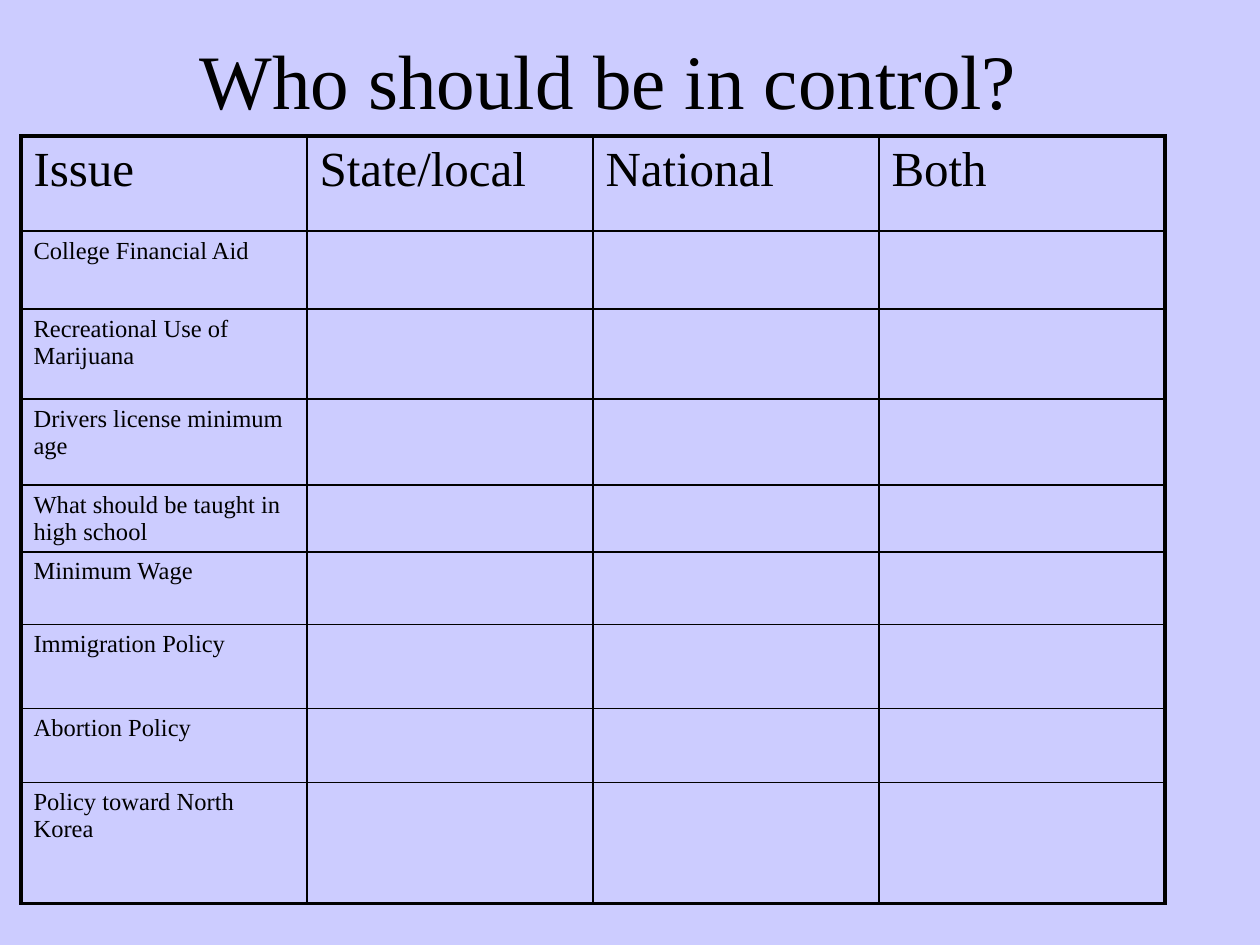
from dataclasses import dataclass

import pptx
import pptx.dml.color
import pptx.enum.text
import pptx.oxml
import pptx.oxml.ns
import pptx.util

PX = 914400 // 126


@dataclass(frozen=True)
class Theme:
    background: str = "CCCCFF"
    ink: str = "000000"
    font: str = "Times New Roman"
    title_size: int = 44
    header_size: int = 28
    issue_size: int = 14
    outer_line: float = 2.25
    inner_line: float = 1


THEME = Theme()
HEADERS = ["Issue", "State/local", "National", "Both"]
ISSUES = [
    "College Financial Aid",
    "Recreational Use of Marijuana",
    "Drivers license minimum age",
    "What should be taught in high school",
    "Minimum Wage",
    "Immigration Policy",
    "Abortion Policy",
    "Policy toward North Korea",
]
ROW_HEIGHTS = [95, 78, 90, 86, 63, 73, 84, 74, 121]


def rgb(value):
    return pptx.dml.color.RGBColor.from_string(value)


def format_runs(paragraph, size):
    for run in paragraph.runs:
        run.font.name = THEME.font
        run.font.size = pptx.util.Pt(size)
        run.font.bold = False
        run.font.color.rgb = rgb(THEME.ink)


def add_border(cell, side, points):
    width = int(pptx.util.Pt(points))
    cell._tc.get_or_add_tcPr().append(pptx.oxml.parse_xml(
        f'<a:ln{side} {pptx.oxml.ns.nsdecls("a")} w="{width}"><a:solidFill>'
        f'<a:srgbClr val="{THEME.ink}"/></a:solidFill></a:ln{side}>'))


def add_space_before(paragraph, percent):
    paragraph._p.get_or_add_pPr().append(pptx.oxml.parse_xml(
        f'<a:spcBef {pptx.oxml.ns.nsdecls("a")}>'
        f'<a:spcPct val="{percent * 1000}"/></a:spcBef>'))


def place_title(slide, left, top, width, height):
    title = slide.shapes.title
    title.left, title.top = left * PX, top * PX
    title.width, title.height = width * PX, height * PX
    title.text_frame.text = "Who should be in control?"
    title.text_frame.vertical_anchor = pptx.enum.text.MSO_ANCHOR.MIDDLE
    heading = title.text_frame.paragraphs[0]
    heading.alignment = pptx.enum.text.PP_ALIGN.CENTER
    format_runs(heading, THEME.title_size)


def fill_cell(cell, text, size):
    cell.fill.background()
    if text:
        cell.text_frame.text = text
        paragraph = cell.text_frame.paragraphs[0]
        add_space_before(paragraph, 20)
        format_runs(paragraph, size)


def place_issue_table(slide, left, top, width):
    entries = [HEADERS] + [[issue, "", "", ""] for issue in ISSUES]
    last_row, last_column = len(entries) - 1, len(HEADERS) - 1
    issue_table = slide.shapes.add_table(
        len(entries), len(HEADERS), left * PX, top * PX,
        width * PX, sum(ROW_HEIGHTS) * PX).table
    issue_table.first_row = issue_table.horz_banding = False
    for column in issue_table.columns:
        column.width = width // len(HEADERS) * PX

    for r, (entry, height) in enumerate(zip(entries, ROW_HEIGHTS)):
        issue_table.rows[r].height = height * PX
        size = THEME.issue_size if r else THEME.header_size
        for c, text in enumerate(entry):
            cell = issue_table.cell(r, c)
            # Heavy lines only around the outside of the grid
            edges = {"L": c == 0, "R": c == last_column,
                     "T": r == 0, "B": r == last_row}
            for side, outer in edges.items():
                add_border(cell, side, THEME.outer_line if outer else THEME.inner_line)
            fill_cell(cell, text, size)


def main():
    deck = pptx.Presentation()
    deck.slide_width, deck.slide_height = 1260 * PX, 945 * PX
    slide = deck.slides.add_slide(deck.slide_layouts[5])
    slide.background.fill.solid()
    slide.background.fill.fore_color.rgb = rgb(THEME.background)

    # Heading
    place_title(slide, 73, 0, 1071, 158)
    # Issues against levels of government
    place_issue_table(slide, 21, 136, 1144)
    deck.save("out.pptx")


if __name__ == "__main__":
    main()
